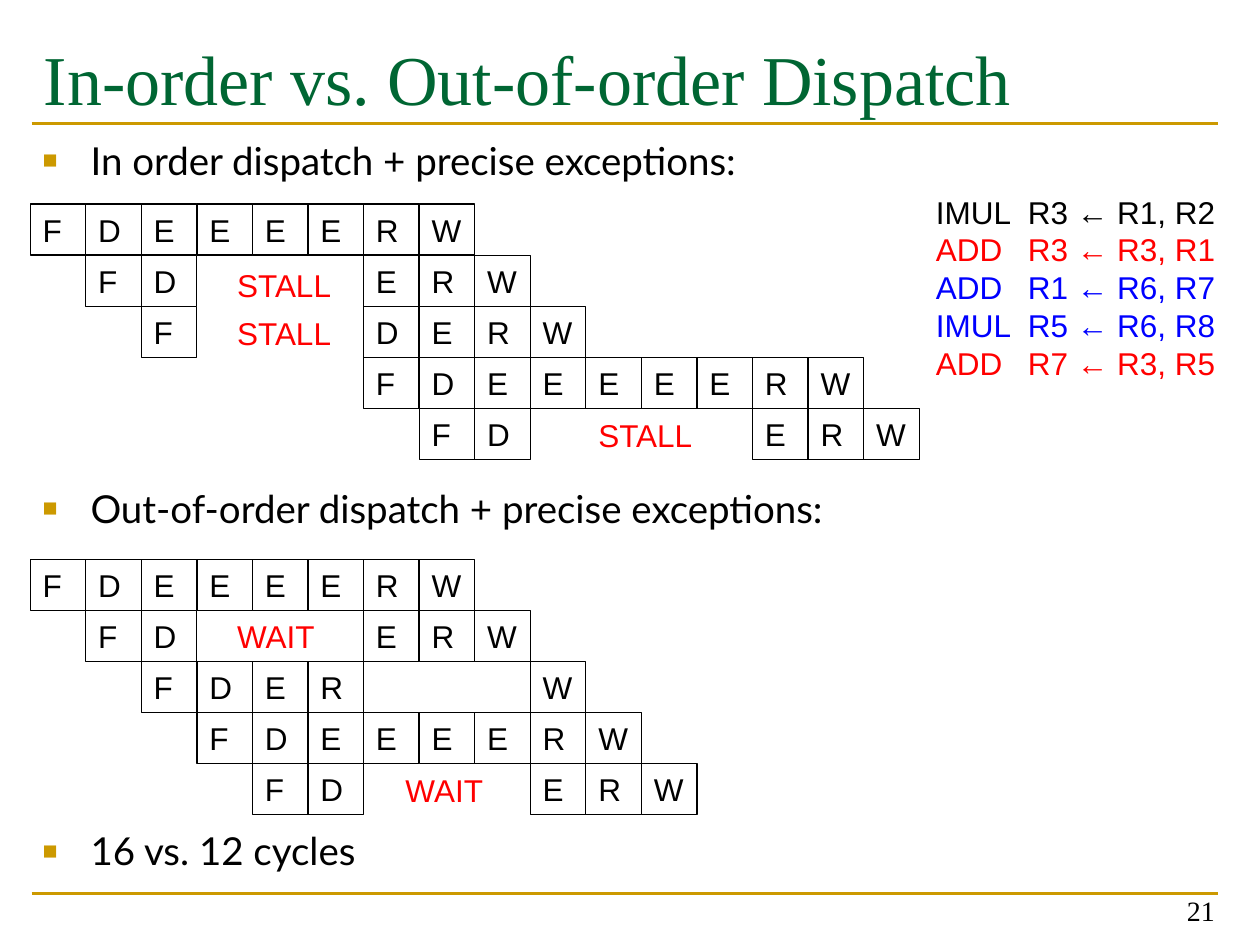
from lxml import etree
from pptx import Presentation, util as u
from pptx.dml.color import RGBColor
from pptx.enum import shapes, text
from pptx.oxml import ns

BLACK = RGBColor(0x00, 0x00, 0x00)
WHITE = RGBColor(0xFF, 0xFF, 0xFF)
GREEN = RGBColor(0x00, 0x66, 0x33)
GOLD = RGBColor(0xCC, 0x99, 0x00)
RED = RGBColor(0xFF, 0x00, 0x00)
BLUE = RGBColor(0x00, 0x00, 0xFF)

LEFT, COL, ROW = 0.24, 0.441, 0.405  # pipeline grid, inches
MIDDLE = text.MSO_ANCHOR.MIDDLE


class PipelineSlide:
    """Holds the style and the current slide."""
    sans, serif, body = "Arial", "Times New Roman", "Lato"

    def __init__(self, deck):
        self.slide = deck.slides.add_slide(deck.slide_layouts[6])

    def style(self, paragraph, face, size, color):
        font = paragraph.font
        font.name, font.size, font.color.rgb = face, u.Pt(size), color

    def text(self, box, lines, face, size, anchor=text.MSO_ANCHOR.TOP, wrap=True):
        """Add a text box; lines are (wording, colour) pairs."""
        frame = self.slide.shapes.add_textbox(*map(u.Inches, box)).text_frame
        frame.word_wrap, frame.vertical_anchor = wrap, anchor
        for i, (wording, color) in enumerate(lines):
            paragraph = frame.add_paragraph() if i else frame.paragraphs[0]
            paragraph.text = wording
            self.style(paragraph, face, size, color)
        return frame.paragraphs

    def properties(self, paragraph, *elements):
        """Put (tag, attributes) elements ahead of the paragraph's font."""
        props = paragraph._p.get_or_add_pPr()
        for i, (tag, attributes) in enumerate(elements):
            element = etree.Element(ns.qn(tag), attributes)
            props.insert(i, element)
        return props

    def bullet(self, center, wording):
        paragraph, = self.text((LEFT, center - 0.25, 9.42, 0.5),
                               [(wording, BLACK)], self.body, 22, MIDDLE)
        props = self.properties(paragraph, ("a:buClr", {}),
                                ("a:buSzPct", {"val": "65000"}),
                                ("a:buFont", {"typeface": self.sans}),
                                ("a:buChar", {"char": "■"}))
        etree.SubElement(props[0], ns.qn("a:srgbClr"), val=str(GOLD))
        props.set("marL", str(u.Inches(0.38)))
        props.set("indent", str(u.Inches(-0.38)))

    def code(self, box, lines):
        for paragraph in self.text(box, lines, self.sans, 18, wrap=False):
            props = self.properties(paragraph, ("a:tabLst", {}))
            etree.SubElement(props[0], ns.qn("a:tab"),
                             pos=str(u.Inches(0.73)), algn="l")

    def rule(self, y):
        line = self.slide.shapes.add_connector(
            shapes.MSO_CONNECTOR.STRAIGHT,
            *map(u.Inches, (0.25, y, 9.67, y)))
        line.line.color.rgb, line.line.width = GOLD, u.Pt(1.5)
        etree.SubElement(line._element.spPr, ns.qn("a:effectLst"))

    def stage(self, col, y, letter):
        cell = self.slide.shapes.add_shape(
            shapes.MSO_SHAPE.RECTANGLE, u.Inches(LEFT + col * COL),
            u.Inches(y), u.Inches(COL), u.Inches(ROW))
        cell.shadow.inherit = False
        cell.fill.solid()
        cell.fill.fore_color.rgb = WHITE
        cell.line.color.rgb, cell.line.width = BLACK, u.Pt(0.75)
        cell.text_frame.vertical_anchor = MIDDLE
        paragraph = cell.text_frame.paragraphs[0]
        paragraph.text, paragraph.alignment = letter, text.PP_ALIGN.LEFT
        self.style(paragraph, self.sans, 18, BLACK)

    def pipeline(self, top, instructions, delays):
        """One row per instruction, one column per cycle; a dot is no stage."""
        for row, stages in enumerate(instructions):
            for col, letter in enumerate(stages):
                if letter != ".":
                    self.stage(col, top + row * ROW, letter)
        for word, col, row, width in delays:
            self.text((LEFT + col * COL, top + row * ROW, width, 0.4),
                      [(word, RED)], self.sans, 18, wrap=False)


def main():
    deck = Presentation()
    deck.slide_width, deck.slide_height = u.Inches(10), u.Inches(7.5)
    page = PipelineSlide(deck)

    # Title and rules
    page.rule(7.09)
    page.rule(0.98)
    page.text((0.25, 0.23, 9.42, 0.75),
              [("In-order vs. Out-of-order Dispatch", GREEN)], page.serif, 40)

    # Bullets
    page.bullet(1.27, "In order dispatch + precise exceptions:")
    page.bullet(4.03, "Out-of-order dispatch + precise exceptions:")
    page.bullet(6.75, "16 vs. 12 cycles")

    # Instruction sequence
    page.code((7.33, 1.48, 2.44, 1.61), [
        ("IMUL\tR3 ← R1, R2", BLACK),
        ("ADD\tR3 ← R3, R1", RED),
        ("ADD\tR1 ← R6, R7", BLUE),
        ("IMUL\tR5 ← R6, R8", BLUE),
        ("ADD\tR7 ← R3, R5", RED)])

    # In-order pipeline
    page.pipeline(1.62, ["FDEEEERW",
                         ".FD...ERW",
                         "..F...DERW",
                         "......FDEEEEERW",
                         ".......FD....ERW"],
                  [("STALL", 3.5, 1.1, 0.95), ("STALL", 3.5, 2.03, 0.95),
                   ("STALL", 10, 4.03, 0.95)])

    # Out-of-order pipeline
    page.pipeline(4.44, ["FDEEEERW",
                         ".FD...ERW",
                         "..FDER...W",
                         "...FDEEEERW",
                         "....FD...ERW"],
                  [("WAIT", 3.5, 1, 0.82), ("WAIT", 6.53, 4.03, 0.82)])

    # Page number
    number, = page.text((7.41, 6.91, 2.33, 0.5), [("21", BLACK)],
                        page.serif, 16, text.MSO_ANCHOR.BOTTOM)
    number.alignment = text.PP_ALIGN.RIGHT

    deck.save("out.pptx")


if __name__ == "__main__":
    main()
